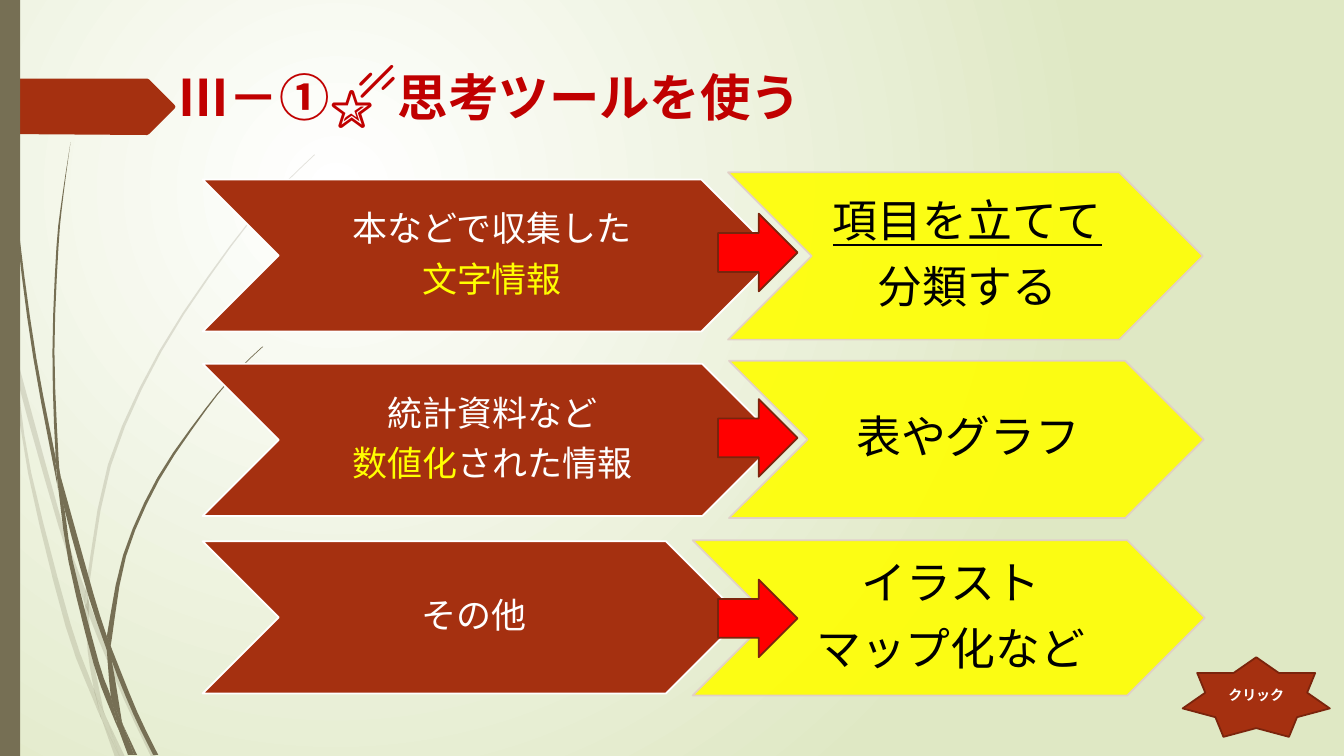
from pptx import Presentation
from pptx.dml.color import RGBColor
from pptx.enum.shapes import MSO_SHAPE as Kind
from pptx.enum.text import MSO_ANCHOR as Anchor, PP_ALIGN as Align
from pptx.oxml import parse_xml
from pptx.oxml.ns import nsdecls, qn
from pptx.util import Inches, Pt

HEX = {
    "white": "FFFFFF", "green": "DFE8C4", "olive": "766F54",
    "rust": "A53010", "brown": "7A240C", "yellow": "FFFF00",
    "pink": "E1CDCC", "red": "FF0000", "crimson": "C00000", "black": "000000",
}
RGB = {name: RGBColor.from_string(code) for name, code in HEX.items()}


def paint(shape, fill, line=None, alpha=100):
    shape.shadow.inherit = False
    shape.fill.solid()
    shape.fill.fore_color.rgb = RGB[fill]
    if line:
        shape.line.color.rgb = RGB[line]
        shape.line.width = Pt(1.25)
    else:
        shape.line.fill.background()
    if alpha < 100:
        for tint in shape._element.spPr.iter(qn("a:srgbClr")):
            tint.append(parse_xml(f'<a:alpha {nsdecls("a")} val="{alpha * 1000}"/>'))


def smooth(knots, steps=3):
    ends = [knots[0]] + knots + [knots[-1]]
    curve = []
    for a, b, c, d in zip(ends, ends[1:], ends[2:], ends[3:]):
        for i in range(steps):
            t = i / steps
            curve.append([
                q + t / 2 * (r - p + t * (2 * p - 5 * q + 4 * r - s + t * (3 * q - p - 3 * r + s)))
                for p, q, r, s in zip(a, b, c, d)
            ])
    return curve + [knots[-1]]


deck = Presentation()
deck.slide_width, deck.slide_height = Inches(13.33), Inches(7.5)
slide = deck.slides.add_slide(deck.slide_layouts[6])
shapes = slide.shapes

back = slide.background.fill
back.gradient()
for stop, name in zip(back.gradient_stops, ["white", "green"]):
    stop.color.rgb = RGB[name]
sweep = next(slide.element.iter(qn("a:lin")))
sweep.getparent().replace(sweep, parse_xml(
    f'<a:path {nsdecls("a")} path="circle">'
    '<a:fillToRect l="50000" t="50000" r="100000" b="100000"/></a:path>'))

pale = [
    ([(0, 2.99), (0.1, 3.44), (0.11, 3.5)], [(0, 2.82), (0.09, 3.22), (0.11, 3.5)]),
    ([(0.14, 3.45), (0.17, 3.76), (0.58, 5.22), (0.84, 5.99)],
     [(0.14, 3.45), (0.62, 5.2), (0.85, 5.86)]),
    ([(0.88, 5.96), (0.88, 6.1), (1.23, 6.94), (1.5, 7.51)],
     [(0.88, 5.96), (0.92, 6.07), (1.27, 6.92), (1.55, 7.51)]),
    ([(1.05, 7.11), (1.19, 7.51)], [(1.05, 7.11), (1.24, 7.51)]),
    ([(0.11, 3.5), (0.28, 4.7), (0.65, 6.21), (0.92, 6.93), (1.01, 7.14)],
     [(0.11, 3.5), (0.17, 3.76), (0.31, 4.69), (0.7, 6.19), (0.93, 6.83), (0.99, 7.07)]),
    ([(0.84, 5.99), (0.87, 6.46), (0.93, 6.83), (0.96, 6.92), (1.05, 7.11)],
     [(0.84, 5.99), (0.88, 6.08), (0.91, 6.46), (1.03, 7.06)]),
    ([(3.12, 1.53), (2.89, 1.75), (2.68, 1.97), (2.28, 2.44), (1.58, 3.48), (1.07, 4.61),
      (0.85, 5.84), (0.85, 5.86)],
     [(3.12, 1.54), (2.9, 1.75), (2.68, 1.98), (2.29, 2.45), (1.6, 3.49), (1.1, 4.62),
      (0.88, 5.84), (0.88, 5.96)]),
    ([(1.01, 7.14), (1.14, 7.51)], [(1.01, 7.14), (1.19, 7.51)]),
    ([(0.85, 5.86), (0.84, 5.99), (0.88, 6.08)], [(0.85, 5.86), (0.88, 5.96), (0.88, 6.1)]),
    ([(0.93, 6.83), (0.99, 7.07), (1.01, 7.14), (1.19, 7.51)],
     [(0.93, 6.83), (0.96, 6.92), (1.05, 7.11), (1.19, 7.51)]),
]
dark = [
    ([(0.03, 0), (0.04, 0.48), (0.07, 1.1), (0.17, 2.33), (0.33, 3.55), (0.56, 4.77), (0.57, 4.81)],
     [(0.04, 0), (0.05, 0.48), (0.08, 1.09), (0.19, 2.32), (0.36, 3.55), (0.55, 4.53), (0.55, 4.57)]),
    ([(0.6, 4.72), (0.64, 5.05), (0.88, 5.92), (1.06, 6.45)],
     [(0.6, 4.72), (0.93, 5.9), (1.06, 6.31)]),
    ([(1.1, 6.41), (1.11, 6.56), (1.32, 7.08), (1.52, 7.49)],
     [(1.1, 6.41), (1.13, 6.49), (1.36, 7.06), (1.57, 7.49)]),
    ([(0.57, 4.77), (0.68, 5.57), (0.93, 6.59), (1.11, 7.08), (1.17, 7.22)],
     [(0.57, 4.77), (0.64, 5.05), (0.72, 5.56), (0.98, 6.57), (1.1, 6.91), (1.16, 7.17)]),
    ([(0.7, 1.41), (0.62, 1.93), (0.56, 2.45), (0.52, 3.49), (0.55, 4.49), (0.6, 4.72)],
     [(0.7, 1.41), (0.63, 1.93), (0.58, 2.45), (0.54, 3.49), (0.58, 4.53), (0.6, 4.72)]),
    ([(1.22, 7.19), (1.33, 7.49)], [(1.22, 7.19), (1.36, 7.49)]),
    ([(0.55, 4.49), (0.57, 4.77), (0.64, 5.05)], [(0.55, 4.49), (0.6, 4.72), (0.64, 5.05)]),
    ([(2.6, 3.44), (2.45, 3.58), (2.31, 3.73), (2.04, 4.05), (1.56, 4.74), (1.22, 5.51), (1.06, 6.31)],
     [(2.61, 3.44), (2.45, 3.59), (2.31, 3.74), (2.05, 4.06), (1.58, 4.76), (1.25, 5.52),
      (1.11, 6.33), (1.1, 6.41)]),
    ([(1.17, 7.22), (1.27, 7.49)], [(1.17, 7.22), (1.31, 7.49)]),
    ([(1.06, 6.45), (1.1, 6.91), (1.16, 7.06), (1.22, 7.19)],
     [(1.06, 6.45), (1.11, 6.56), (1.21, 7.16)]),
    ([(1.06, 6.31), (1.06, 6.45), (1.11, 6.56)], [(1.06, 6.31), (1.1, 6.41), (1.11, 6.56)]),
    ([(1.1, 6.91), (1.16, 7.17), (1.17, 7.22), (1.3, 7.49)],
     [(1.1, 6.91), (1.16, 7.06), (1.22, 7.19), (1.33, 7.49)]),
]
tag = [(0, 0.78), (1.46, 0.78), (1.48, 0.79), (1.73, 1.04), (1.74, 1.06),
       (1.73, 1.08), (1.48, 1.33), (1.46, 1.34), (0, 1.33)]
outlines = [(smooth(left) + smooth(right)[::-1], "olive", alpha)
            for blades, alpha in [(pale, 20), (dark, 100)] for left, right in blades]
for dots, hue, alpha in outlines + [(tag, "rust", 100)]:
    dots = [(Inches(x), Inches(y)) for x, y in dots]
    pen = shapes.build_freeform(*dots[0])
    pen.add_line_segments(dots[1:])
    paint(pen.convert_to_shape(), hue, alpha=alpha)

bar = shapes.add_shape(Kind.RECTANGLE, 0, 0, Inches(0.2), Inches(7.5))
paint(bar, "olive")

sides = {"rust": ("white", 100, 25, 9), "yellow": ("pink", 90, 32, 12)}
rows = [
    ("rust", 2.01, 1.78, 5.7, 1.51, [[("本などで収集した", "white")], [("文字情報", "yellow")]]),
    ("yellow", 7.22, 1.71, 4.71, 1.66, [[("項目を立てて", "black")], [("分類する", "black")]]),
    ("rust", 2.01, 3.61, 5.71, 1.51,
     [[("統計資料など", "white")], [("数値化", "yellow"), ("された情報", "white")]]),
    ("yellow", 7.23, 3.58, 4.71, 1.56, [[("表やグラフ", "black")]]),
    ("rust", 2.01, 5.37, 5.35, 1.51, [[("その他", "white")]]),
    ("yellow", 6.87, 5.36, 5.08, 1.54, [[("イラスト", "black")], [("マップ化など", "black")]]),
]
for fill, x, y, w, h, lines in rows:
    edge, alpha, size, gap = sides[fill]
    box = shapes.add_shape(Kind.CHEVRON, Inches(x), Inches(y), Inches(w), Inches(h))
    paint(box, fill, edge, alpha)
    frame = box.text_frame
    frame.vertical_anchor = Anchor.MIDDLE
    frame.margin_left, frame.margin_right = Inches(0.04), 0
    frame.margin_top = frame.margin_bottom = Inches(0.02)
    frame.text = "\n".join("" for _ in lines)
    for para, parts in zip(frame.paragraphs, lines):
        para.alignment = Align.CENTER
        para.line_spacing = 0.9
        para.space_after = Pt(gap)
        for words, hue in parts:
            run = para.add_run()
            run.text = words
            run.font.name, run.font.size = "Arial", Pt(size)
            run.font.color.rgb = RGB[hue]
            run.font.underline = words == "項目を立てて"

for y in [2.12, 3.96, 5.75]:
    arrow = shapes.add_shape(Kind.RIGHT_ARROW, Inches(7.12), Inches(y), Inches(0.79), Inches(0.77))
    paint(arrow, "red", "brown")

title = shapes.add_textbox(Inches(1.67), Inches(0.44), Inches(7.96), Inches(0.91))
title.text_frame.word_wrap = True
for words, size in [("Ⅲ－①", 36), ("🌠", 48), ("思考ツールを使う", 36)]:
    run = title.text_frame.paragraphs[0].add_run()
    run.text = words
    run.font.name, run.font.size, run.font.bold = "Karla", Pt(size), True
    run.font.color.rgb = RGB["crimson"]
    run.font._element.insert(0, parse_xml(
        f'<a:ln {nsdecls("a")} w="9525"><a:solidFill><a:srgbClr val="{HEX["white"]}"/></a:solidFill></a:ln>'))

star = shapes.add_shape(Kind.STAR_7_POINT, Inches(11.73), Inches(6.52), Inches(1.46), Inches(0.79))
paint(star, "rust", "brown")
star.text_frame.text = "クリック"
star.text_frame.vertical_anchor = Anchor.MIDDLE
label = star.text_frame.paragraphs[0]
label.alignment = Align.CENTER
font = label.runs[0].font
font.name, font.size, font.bold = "Quicksand", Pt(10), True
font.color.rgb = RGB["white"]

deck.save("out.pptx")
